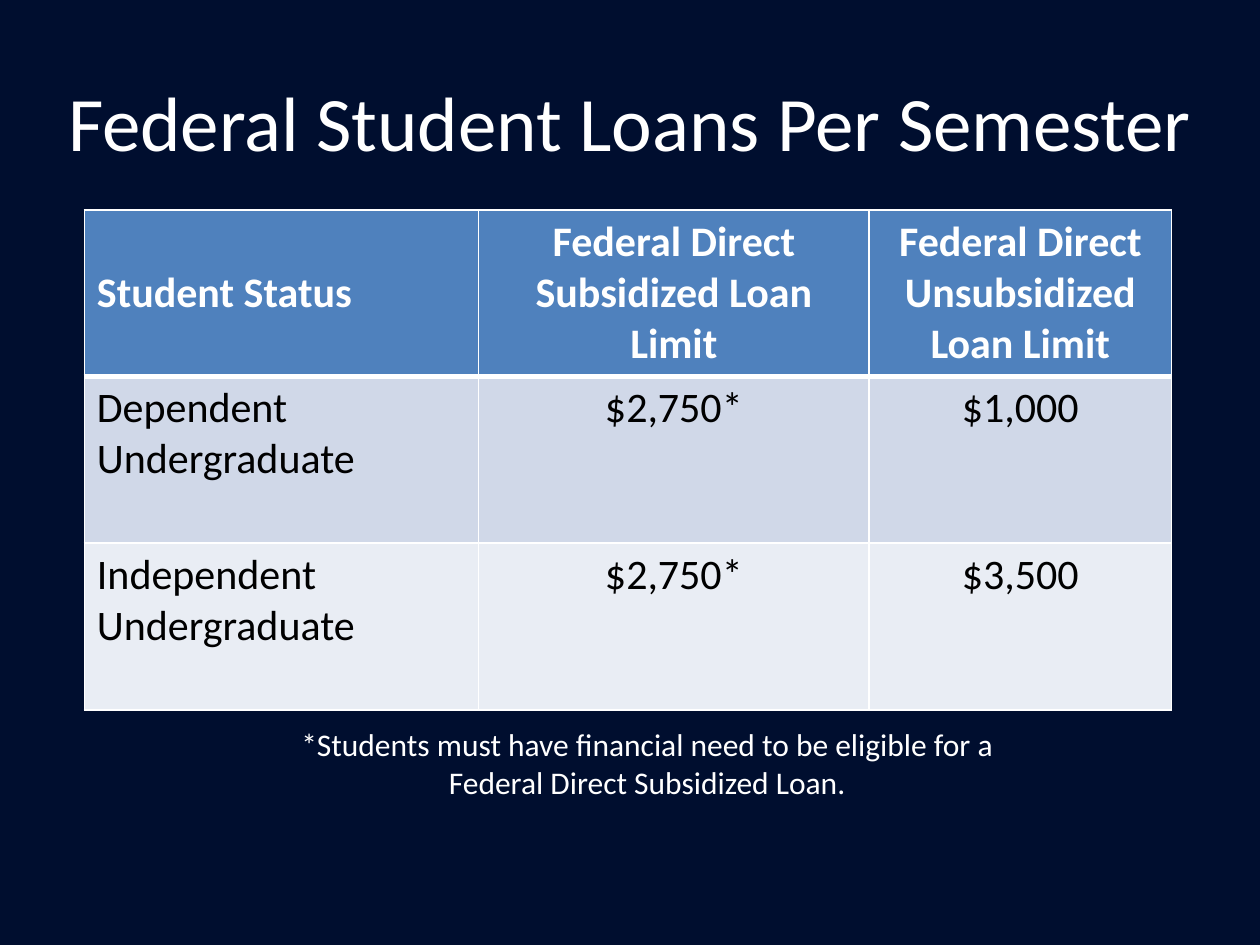
from typing import NamedTuple

from lxml import etree
from pptx import Presentation
from pptx.dml.color import RGBColor
from pptx.enum import text
from pptx.oxml import ns
from pptx.util import Cm, Pt

FONT = "Calibri"
NAVY = RGBColor(0x00, 0x0E, 0x2F)
WHITE = RGBColor(0xFF, 0xFF, 0xFF)
BLACK = RGBColor(0x00, 0x00, 0x00)
BLUE = RGBColor(0x4F, 0x81, 0xBD)
PALE = RGBColor(0xD0, 0xD8, 0xE8)
LIGHT = RGBColor(0xE9, 0xED, 0xF4)


class Box(NamedTuple):
    left: float
    top: float
    width: float
    height: float


class Row(NamedTuple):
    words: tuple[str, str, str]
    fill: RGBColor
    ink: RGBColor
    head: bool = False


WIDTHS = (7.95, 7.87, 6.1)
HEIGHT = 3.36
ROWS = (
    Row(("Student Status", "Federal Direct Subsidized Loan Limit",
         "Federal Direct Unsubsidized Loan Limit"), BLUE, WHITE, True),
    Row(("Dependent Undergraduate", "$2,750*", "$1,000"), PALE, BLACK),
    Row(("Independent Undergraduate", "$2,750*", "$3,500"), LIGHT, BLACK),
)
NOTE = ("*Students must have financial need to be eligible for a",
        "Federal Direct Subsidized Loan.")


def style(para, size: float, ink: RGBColor, bold: bool = False,
          center: bool = True) -> None:
    font = para.font
    font.name, font.size, font.bold = FONT, Pt(size), bold
    font.color.rgb = ink
    para.alignment = text.PP_ALIGN.CENTER if center else text.PP_ALIGN.LEFT


def add_text(slide, box: Box, lines: tuple[str, ...], size: float,
             anchor=text.MSO_ANCHOR.TOP) -> None:
    frame = slide.shapes.add_textbox(*map(Cm, box)).text_frame
    frame.word_wrap = True
    frame.vertical_anchor = anchor
    frame.text = "\n".join(lines)
    for para in frame.paragraphs:
        style(para, size, WHITE)


def add_edge(cell, index: int, side: str, width: float) -> None:
    """Draw one white border; borders must come before the cell's fill."""
    line = etree.Element(ns.qn(f"a:ln{side}"), w=str(Pt(width)))
    fill = etree.SubElement(line, ns.qn("a:solidFill"))
    etree.SubElement(fill, ns.qn("a:srgbClr"), val=str(WHITE))
    cell._tc.get_or_add_tcPr().insert(index, line)


def fill_cell(cell, words: str, row: Row, center: bool,
              top: float, bottom: float) -> None:
    cell.text = words
    style(cell.text_frame.paragraphs[0], 24, row.ink, row.head, center)
    if row.head:
        cell.vertical_anchor = text.MSO_ANCHOR.MIDDLE
    cell.fill.solid()
    cell.fill.fore_color.rgb = row.fill
    edges = (("L", 1), ("R", 1), ("T", top), ("B", bottom))
    for index, (side, width) in enumerate(edges):
        add_edge(cell, index, side, width)


def add_loans(slide, left: float, top: float) -> None:
    box = Box(left, top, sum(WIDTHS), HEIGHT * len(ROWS))
    table = slide.shapes.add_table(len(ROWS), len(WIDTHS), *map(Cm, box)).table
    for col, width in zip(table.columns, WIDTHS):
        col.width = Cm(width)
    for r, row in enumerate(ROWS):
        table.rows[r].height = Cm(HEIGHT)
        above = 3 if r and ROWS[r - 1].head else 1
        below = 3 if row.head else 1
        for c, words in enumerate(row.words):
            fill_cell(table.cell(r, c), words, row, c > 0, above, below)


def main() -> None:
    deck = Presentation()
    deck.slide_width, deck.slide_height = Cm(25.4), Cm(19.05)
    slide = deck.slides.add_slide(deck.slide_layouts[6])
    slide.background.fill.solid()
    slide.background.fill.fore_color.rgb = NAVY
    add_text(slide, Box(0.64, 0.85, 24.13, 3.18),
             ("Federal Student Loans Per Semester",), 44,
             text.MSO_ANCHOR.MIDDLE)
    add_loans(slide, 1.7, 4.23)
    add_text(slide, Box(2.1, 14.5, 21.9, 1.8), NOTE, 18)
    deck.save("out.pptx")


if __name__ == "__main__":
    main()
